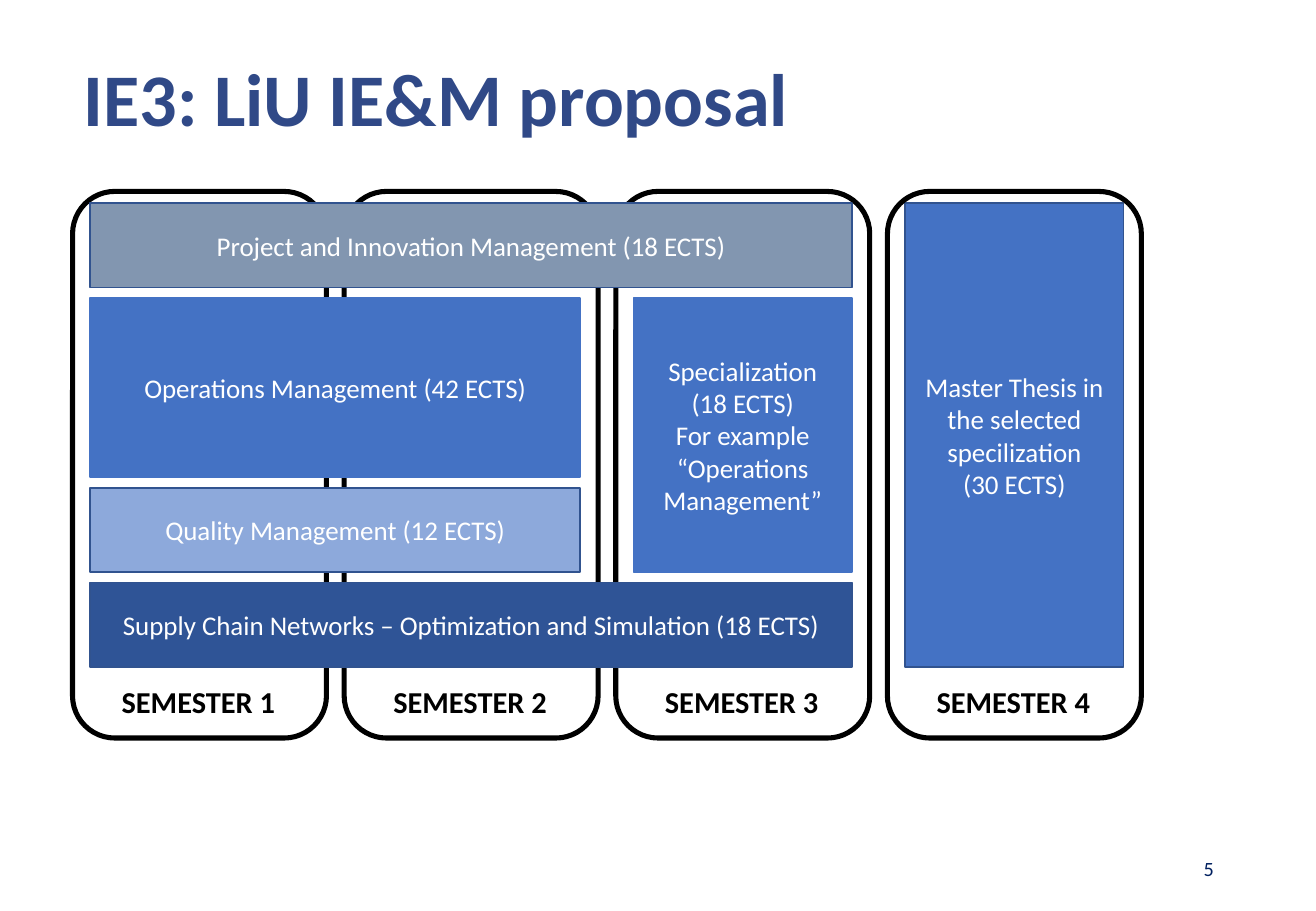
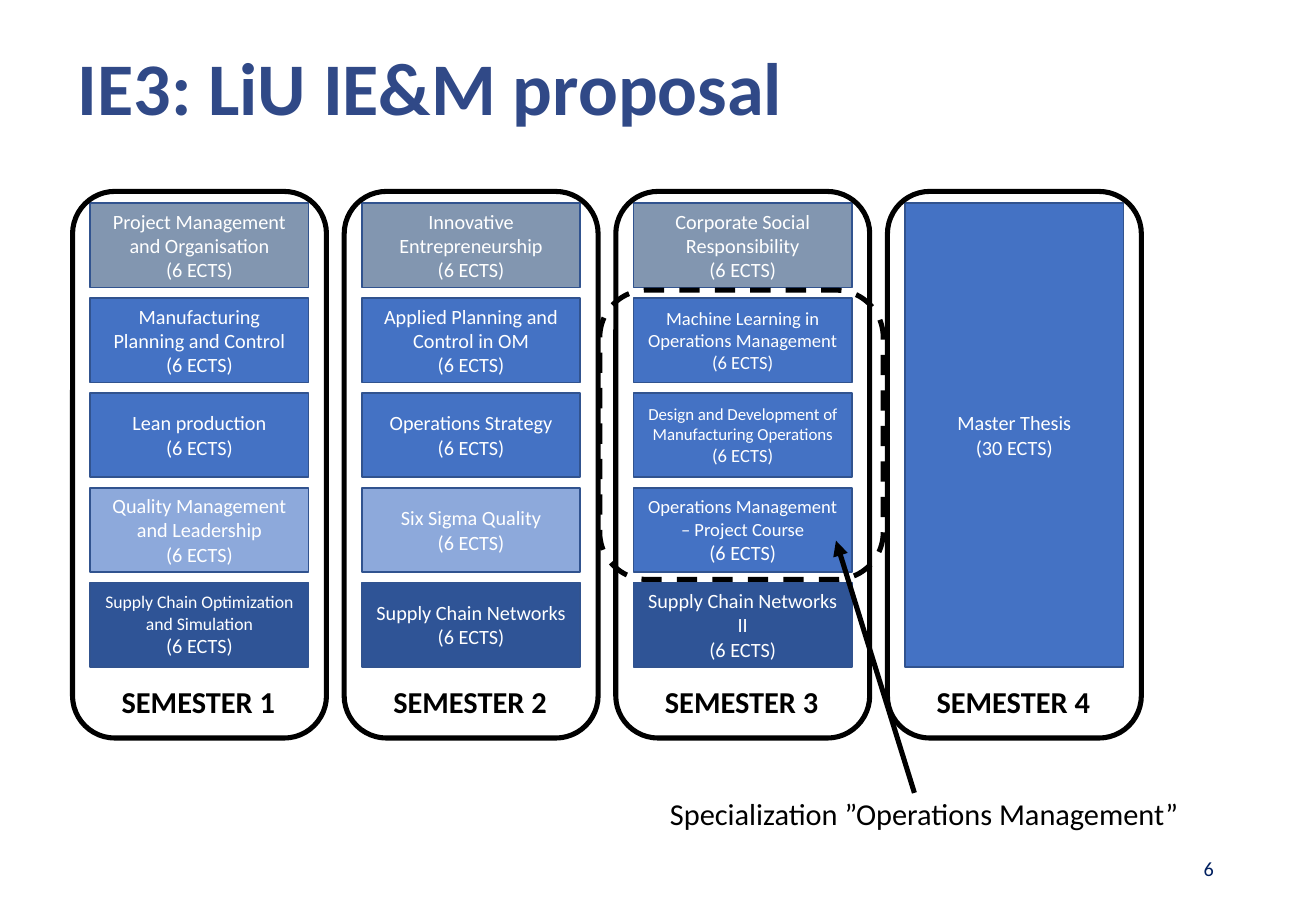
import lxml.etree
import pptx
import pptx.dml.color
import pptx.enum.dml
import pptx.enum.shapes
import pptx.enum.text
import pptx.oxml.ns
import pptx.util

Pt = pptx.util.Pt
ALIGN = pptx.enum.text.PP_ALIGN
ANCHOR = pptx.enum.text.MSO_ANCHOR
SHAPE = pptx.enum.shapes.MSO_SHAPE

BLACK, WHITE = "000000", "FFFFFF"
TITLE, NAVY, OUTLINE = "304987", "002060", "31538F"
SLATE, BLUE, PALE, DEEP = "8296B0", "4472C4", "8DA9DB", "2F5496"
FRAME_LEFT, FRAME_TOP, COLUMN_STEP = 43, 113.5, 161
FRAME_WIDTH, FRAME_HEIGHT = 150.5, 324
BOX_LEFT, BOX_TOP, ROW_STEP = 53.5, 120.5, 56.2
BOX_WIDTH, BOX_HEIGHT = 129.5, 50


def color(value):
    return pptx.dml.color.RGBColor.from_string(value)


class Deck:
    """Holds the shared style and the current slide."""

    font = "Calibri"

    def __init__(self):
        self.presentation = pptx.Presentation()
        self.presentation.slide_width = Pt(780)
        self.presentation.slide_height = Pt(540)

    def start_slide(self, title, title_left, title_top, number):
        layout = self.presentation.slide_layouts[6]
        self.slide = self.presentation.slides.add_slide(layout)
        box = self.text(title_left, title_top, 672.5, 75, [(title, 44)], TITLE, bold=True, anchor=ANCHOR.MIDDLE)
        box.text_frame.paragraphs[0].line_spacing = 0.9
        self.text(551, 500.5, 175.5, 29, [(str(number), 12)], NAVY, align=ALIGN.RIGHT, anchor=ANCHOR.MIDDLE)

    def add_lines(self, shape, lines, ink, bold=False, align=ALIGN.LEFT, anchor=ANCHOR.TOP):
        frame = shape.text_frame
        frame.word_wrap = True
        frame.vertical_anchor = anchor
        for index, (text, size) in enumerate(lines):
            paragraph = frame.add_paragraph() if index else frame.paragraphs[0]
            paragraph.alignment = align
            run = paragraph.add_run()
            run.text = text
            run.font.name = self.font
            run.font.size = Pt(size)
            run.font.bold = bold
            run.font.color.rgb = color(ink)

    def text(self, left, top, width, height, lines, ink, **style):
        box = self.slide.shapes.add_textbox(Pt(left), Pt(top), Pt(width), Pt(height))
        self.add_lines(box, lines, ink, **style)
        return box

    def box(self, column, row, lines, fill, columns=1, rows=1, line=OUTLINE):
        shape = self.slide.shapes.add_shape(
            SHAPE.RECTANGLE,
            Pt(BOX_LEFT + column * COLUMN_STEP),
            Pt(BOX_TOP + row * ROW_STEP),
            Pt(BOX_WIDTH + (columns - 1) * COLUMN_STEP),
            Pt(BOX_HEIGHT + (rows - 1) * ROW_STEP),
        )
        shape.shadow.inherit = False
        shape.fill.solid()
        shape.fill.fore_color.rgb = color(fill)
        shape.line.color.rgb = color(line)
        shape.line.width = Pt(1)
        self.add_lines(shape, lines, WHITE, align=ALIGN.CENTER, anchor=ANCHOR.MIDDLE)

    def frame(self, left, top, width, height, dashed=False):
        shape = self.slide.shapes.add_shape(SHAPE.ROUNDED_RECTANGLE, Pt(left), Pt(top), Pt(width), Pt(height))
        shape.shadow.inherit = False
        shape.fill.background()
        shape.line.color.rgb = color(BLACK)
        shape.line.width = Pt(3)
        if dashed:
            shape.line.dash_style = pptx.enum.dml.MSO_LINE.DASH

    def semesters(self):
        for column in range(4):
            left = FRAME_LEFT + column * COLUMN_STEP
            self.frame(left, FRAME_TOP, FRAME_WIDTH, FRAME_HEIGHT)
            self.text(left + 22, FRAME_TOP + 288, 110, 29, [(f"SEMESTER {column + 1}", 18)], BLACK, bold=True)

    def arrow(self, start_x, start_y, end_x, end_y):
        connector = self.slide.shapes.add_connector(
            pptx.enum.shapes.MSO_CONNECTOR.STRAIGHT, Pt(start_x), Pt(start_y), Pt(end_x), Pt(end_y)
        )
        connector.line.color.rgb = color(BLACK)
        connector.line.width = Pt(3)
        properties = connector.element.spPr
        line = properties.find(pptx.oxml.ns.qn("a:ln"))
        lxml.etree.SubElement(line, pptx.oxml.ns.qn("a:tailEnd"), type="triangle")
        lxml.etree.SubElement(properties, pptx.oxml.ns.qn("a:effectLst"))


def add_overview(deck):
    deck.start_slide("IE3: LiU IE&M proposal", 42.5, 23, 5)
    thesis = ["Master Thesis in the selected specilization", "(30 ECTS)"]
    specialization = ["Specialization", "(18 ECTS)", "For example", "“Operations Management”"]
    deck.box(3, 0, [(text, 16) for text in thesis], BLUE, rows=5)
    deck.semesters()
    deck.box(2, 1, [(text, 16) for text in specialization], BLUE, rows=3, line=BLUE)
    deck.box(0, 1, [("Operations Management (42 ECTS)", 16)], BLUE, columns=2, rows=2, line=BLUE)
    deck.box(0, 3, [("Quality Management (12 ECTS)", 16)], PALE, columns=2)
    deck.box(0, 0, [("Project and Innovation Management (18 ECTS)", 16)], SLATE, columns=3)
    deck.box(0, 4, [("Supply Chain Networks – Optimization and Simulation (18 ECTS)", 16)], DEEP, columns=3)


def add_courses(deck):
    deck.start_slide("IE3: LiU IE&M proposal", 39, 16.5, 6)
    semesters = [
        [
            ("Project Management and Organisation", 12, 12, SLATE),
            ("Manufacturing Planning and Control", 12, 12, BLUE),
            ("Lean production", 12, 12, BLUE),
            ("Quality Management and Leadership", 12, 12, PALE),
            ("Supply Chain Optimization and Simulation", 10.5, 12, DEEP),
        ],
        [
            ("Innovative Entrepreneurship", 12, 12, SLATE),
            ("Applied Planning and Control in OM", 12, 12, BLUE),
            ("Operations Strategy", 12, 12, BLUE),
            ("Six Sigma Quality", 12, 12, PALE),
            ("Supply Chain Networks", 12, 12, DEEP),
        ],
        [
            ("Corporate Social Responsibility", 12, 12, SLATE),
            ("Machine Learning in Operations Management", 11, 11, BLUE),
            ("Design and Development of Manufacturing Operations", 10, 11, BLUE),
            ("Operations Management – Project Course", 11, 12, BLUE),
            ("Supply Chain Networks II", 12, 12, DEEP),
        ],
    ]
    for column, courses in enumerate(semesters):
        for row, (name, name_size, credit_size, fill) in enumerate(courses):
            deck.box(column, row, [(name, name_size), ("(6 ECTS)", credit_size)], fill)
    deck.box(3, 0, [("Master Thesis", 12), ("(30 ECTS)", 12)], BLUE, rows=5)
    deck.semesters()
    deck.frame(355.5, 172, 168, 171.5, dashed=True)
    deck.text(390, 467.5, 322, 29, [("Specialization ”Operations Management”", 18)], BLACK)
    deck.arrow(542, 470, 495.5, 320.5)


def main():
    deck = Deck()
    add_overview(deck)
    add_courses(deck)
    deck.presentation.save("out.pptx")


if __name__ == "__main__":
    main()
